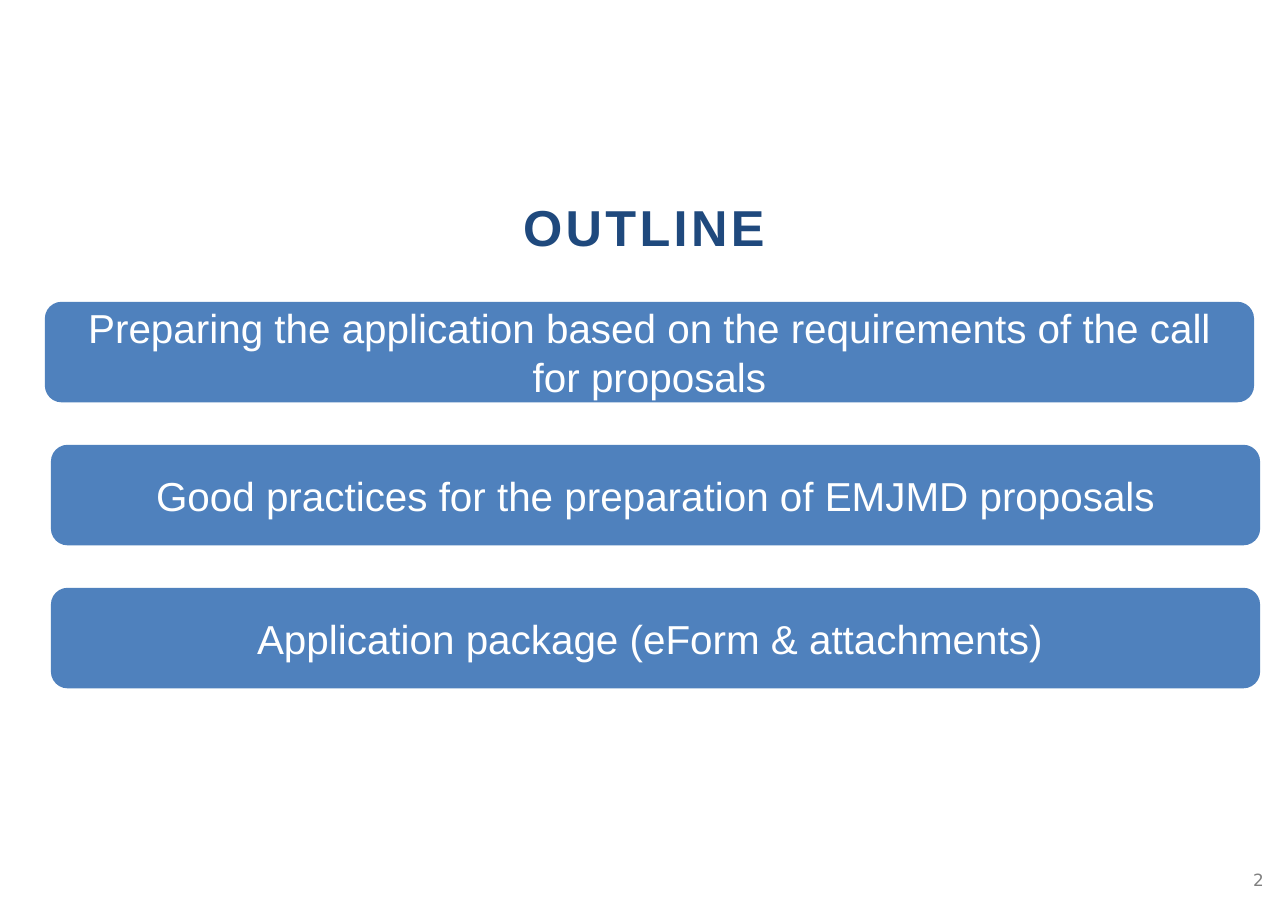
import pptx
import pptx.dml.color
import pptx.enum.shapes
import pptx.enum.text
import pptx.util

WIDTH, HEIGHT = 10.63, 7.5
BAR_WIDTH, BAR_HEIGHT, BAR_STEP = 9.98, 0.83, 1.18
TOPICS = [
    (0.37, "Preparing the application based on the requirements of the call for proposals"),
    (0.42, "Good practices for the preparation of EMJMD proposals"),
    (0.42, "Application package (eForm & attachments) "),
]


def color(hex_string):
    """Turn a hex string into a colour."""
    return pptx.dml.color.RGBColor.from_string(hex_string)


def inches(*lengths):
    """Convert lengths in inches to slide units."""
    return [pptx.util.Inches(length) for length in lengths]


def write(shape, text, size, fill, font="Arial", bold=False, spacing=0, insets=(0.1, 0.05)):
    """Put one centred, formatted paragraph into a shape."""
    frame = shape.text_frame
    frame.word_wrap = True
    frame.vertical_anchor = pptx.enum.text.MSO_ANCHOR.MIDDLE
    frame.margin_left = frame.margin_right = pptx.util.Inches(insets[0])
    frame.margin_top = frame.margin_bottom = pptx.util.Inches(insets[1])
    paragraph = frame.paragraphs[0]
    paragraph.alignment = pptx.enum.text.PP_ALIGN.CENTER
    run = paragraph.add_run()
    run.text = text
    run.font.name = font
    run.font.size = pptx.util.Pt(size)
    run.font.bold = bold
    run.font.color.rgb = color(fill)
    if spacing:
        run._r.get_or_add_rPr().set("spc", str(spacing * 100))


def add_title(slide, box):
    """Add the spaced slide heading."""
    shape = slide.shapes.add_textbox(*inches(*box))
    write(shape, "OUTLINE", size=30, fill="1F497D", bold=True, spacing=2)


def add_page_number(slide, box):
    """Add the page number in the corner."""
    shape = slide.shapes.add_textbox(*inches(*box))
    write(shape, "2", size=10, fill="808080", font="DejaVu Sans")


def add_topics(slide, top):
    """Stack one rounded bar per topic at equal steps."""
    for row, (left, topic) in enumerate(TOPICS):
        bar = slide.shapes.add_shape(
            pptx.enum.shapes.MSO_SHAPE.ROUNDED_RECTANGLE,
            *inches(left, top + row * BAR_STEP, BAR_WIDTH, BAR_HEIGHT),
        )
        bar.shadow.inherit = False
        bar.fill.solid()
        bar.fill.fore_color.rgb = color("4F81BD")
        bar.line.fill.background()
        write(bar, topic, size=24, fill="FFFFFF", insets=(0.08, 0.04))


def main():
    """Build and save the outline slide."""
    presentation = pptx.Presentation()
    presentation.slide_width, presentation.slide_height = inches(WIDTH, HEIGHT)
    slide = presentation.slides.add_slide(presentation.slide_layouts[6])
    add_title(slide, (0, 1.55, WIDTH, 0.64))
    add_topics(slide, top=2.49)
    add_page_number(slide, (WIDTH - 0.49, 7.03, 0.49, 0.46))
    presentation.save("out.pptx")


if __name__ == "__main__":
    main()
